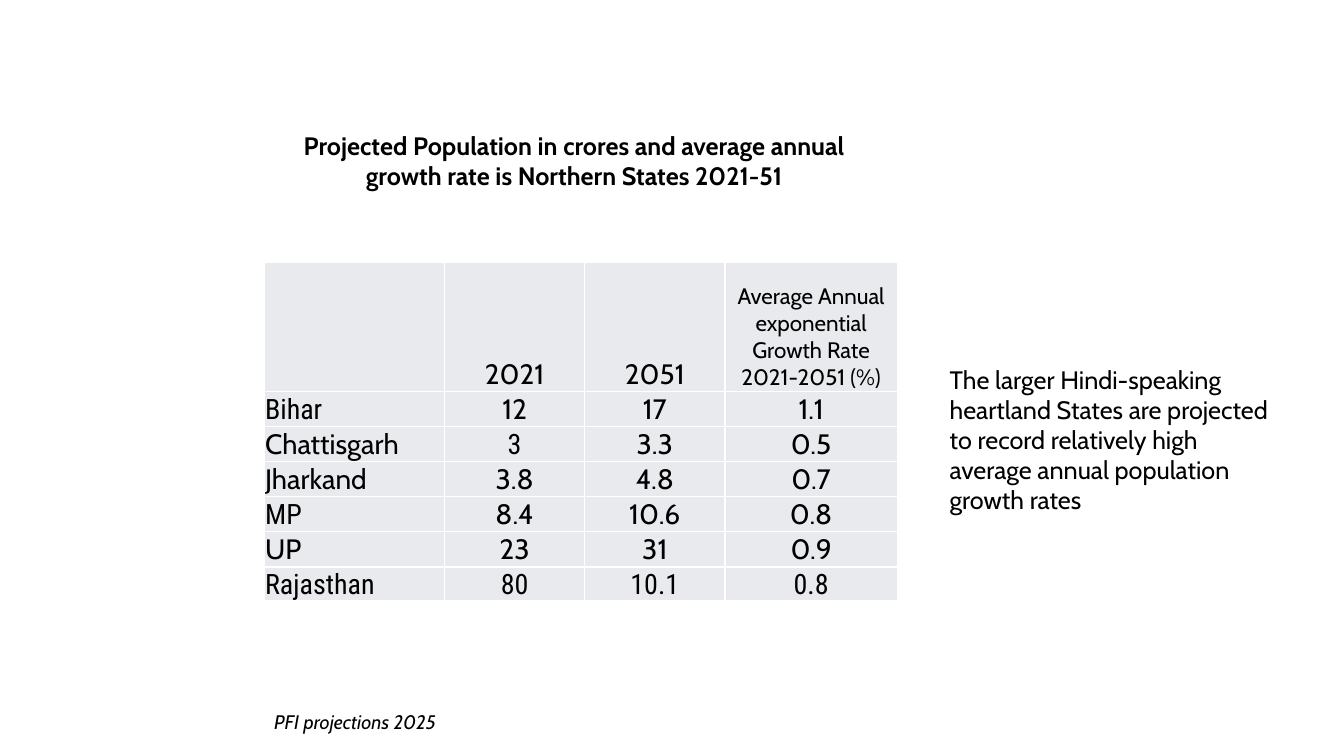
import pptx
import pptx.util
import pptx.dml.color
import pptx.enum.text
import pptx.oxml
import pptx.oxml.ns

SIZE = (13.33, 7.5)
MAIN, SLIM = "Cabin", "Roboto Condensed"
INK, GREY, WHITE = "000000", "E8EAED", "FFFFFF"
ALIGN = pptx.enum.text.PP_ALIGN

ROWS = [
    ("", "2021", "2051", "Average Annual exponential Growth Rate 2021-2051 (%)"),
    ("Bihar", "12", "17", "1.1"),
    ("Chattisgarh", "3", "3.3", "0.5"),
    ("Jharkand", "3.8", "4.8", "0.7"),
    ("MP", "8.4", "10.6", "0.8"),
    ("UP", "23", "31", "0.9"),
    ("Rajasthan", "80", "10.1", "0.8"),
]
SLIM_CELLS = {(1, 0), (2, 1), (4, 0), (6, 0), (6, 1), (6, 2), (6, 3)}

LEFT, TOP = 19.65, 34.67
WIDTHS = (13.43, 10.43, 10.43, 12.83)
HEAD, BODY = 17.07, 4

TEXTS = [
    ("Projected Population in crores and average annual growth rate is Northern States 2021-51",
     (LEFT, 16.53, 46.14, 13.47), 18, ALIGN.CENTER, True, False),
    ("PFI projections 2025", (LEFT, 93.2, 27.53, 4.53), 14, ALIGN.LEFT, False, True),
    ("The larger Hindi-speaking heartland States are projected to record relatively high "
     "average annual population growth rates",
     (69.92, 47.47, 26.26, 21.6), 18, ALIGN.LEFT, False, False),
]


def color(code):
    return pptx.dml.color.RGBColor.from_string(code)


def across(share):
    return pptx.util.Inches(SIZE[0] * share / 100)


def down(share):
    return pptx.util.Inches(SIZE[1] * share / 100)


def place(box):
    x, y, w, h = box
    return across(x), down(y), across(w), down(h)


def write(frame, text, size, align, face=MAIN, bold=False, slant=False):
    par = frame.paragraphs[0]
    par.alignment = align
    run = par.add_run()
    run.text = text
    font = run.font
    font.name, font.size, font.bold, font.italic = face, pptx.util.Pt(size), bold, slant
    font.color.rgb = color(INK)


def border(cell):
    props = cell._tc.get_or_add_tcPr()
    for spot, side in enumerate("LRTB"):
        line = pptx.oxml.parse_xml(
            f'<a:ln{side} {pptx.oxml.ns.nsdecls("a")} w="12700"><a:solidFill>'
            f'<a:srgbClr val="{WHITE}"/></a:solidFill></a:ln{side}>')
        props.insert(spot, line)


def add_grid(slide):
    high = HEAD + BODY * (len(ROWS) - 1)
    box = place((LEFT, TOP, sum(WIDTHS), high))
    table = slide.shapes.add_table(len(ROWS), len(WIDTHS), *box).table
    table.first_row = table.horz_banding = False
    for col, width in zip(table.columns, WIDTHS):
        col.width = across(width)
    for r, row in enumerate(ROWS):
        table.rows[r].height = down(BODY if r else HEAD)
        for c, text in enumerate(row):
            cell = table.cell(r, c)
            cell.fill.solid()
            cell.fill.fore_color.rgb = color(GREY)
            border(cell)
            cell.vertical_anchor = pptx.enum.text.MSO_ANCHOR.BOTTOM
            cell.margin_left = cell.margin_right = cell.margin_top = pptx.util.Inches(0.01)
            cell.margin_bottom = 0
            if text:
                write(cell.text_frame, text, 16 if (r, c) == (0, 3) else 20,
                      ALIGN.CENTER if c else ALIGN.LEFT,
                      SLIM if (r, c) in SLIM_CELLS else MAIN)


def main():
    """Build the slide on projected population in the northern states."""
    deck = pptx.Presentation()
    deck.slide_width, deck.slide_height = map(pptx.util.Inches, SIZE)
    slide = deck.slides.add_slide(deck.slide_layouts[6])
    add_grid(slide)
    for text, box, size, align, bold, slant in TEXTS:
        frame = slide.shapes.add_textbox(*place(box)).text_frame
        frame.word_wrap = True
        frame.auto_size = pptx.enum.text.MSO_AUTO_SIZE.SHAPE_TO_FIT_TEXT
        write(frame, text, size, align, bold=bold, slant=slant)
    deck.save("out.pptx")


if __name__ == "__main__":
    main()
